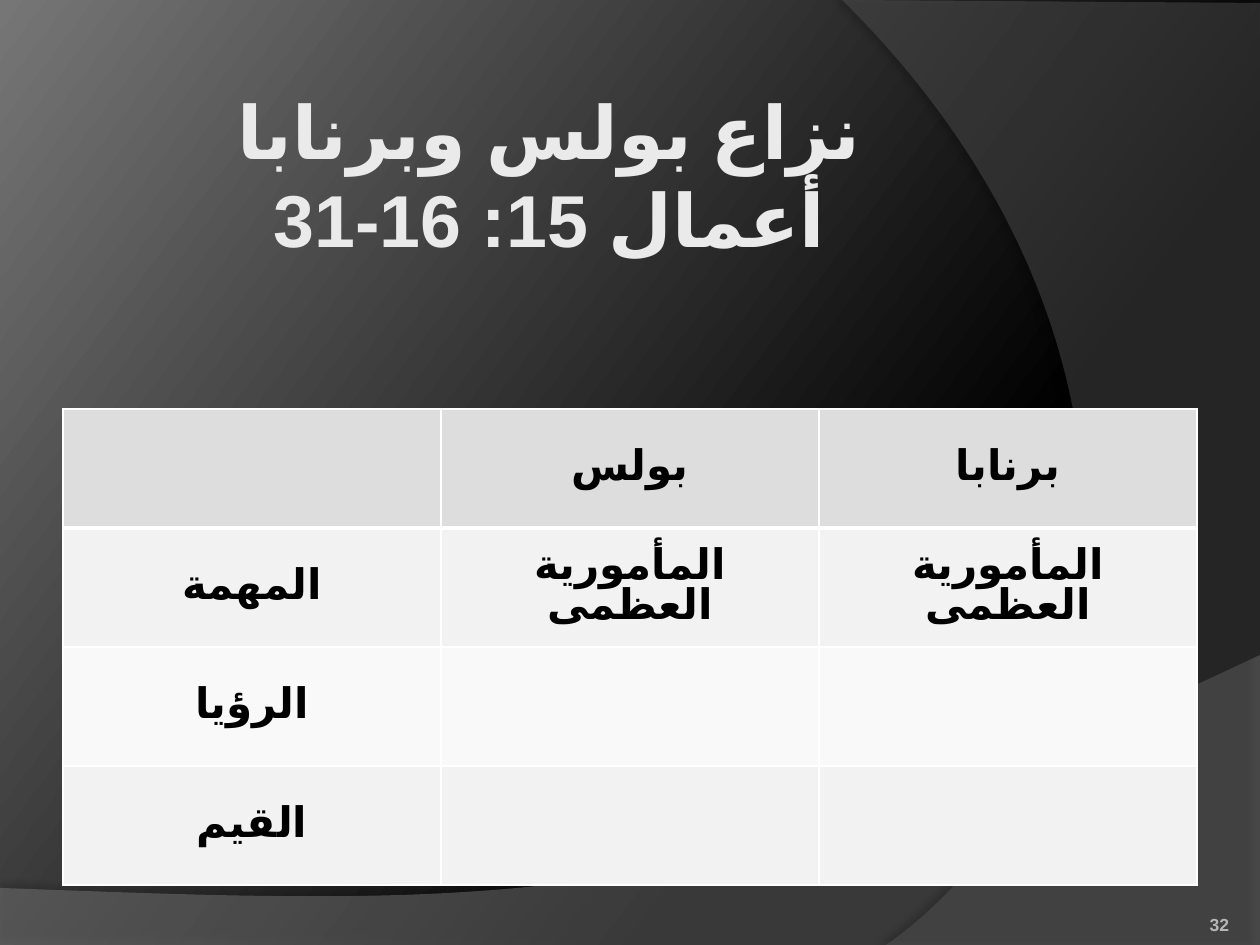
from lxml.etree import SubElement
from pptx import Presentation
from pptx.dml.color import RGBColor
from pptx.enum.lang import MSO_LANGUAGE_ID
from pptx.enum.text import MSO_ANCHOR, MSO_AUTO_SIZE, PP_ALIGN
from pptx.oxml import parse_xml
from pptx.oxml.ns import nsdecls, qn
from pptx.util import Emu, Pt

UNIT = 914400 / 126  # EMU per px
FONT = "Arial"
COLORS = {
    "black": "000000", "gray": "767676", "wave": "7F7F7F", "arc": "5E5E5E",
    "pale": "EAEAEA", "mid": "B1B1B1", "edge": "E3E3E3", "number": "B7B7B7",
    "head": "DDDDDD", "odd": "F2F2F2", "even": "F9F9F9", "white": "FFFFFF",
}
ROWS = [
    ["", "بولس", "برنابا"],
    ["المهمة", "المأمورية العظمى", "المأمورية العظمى"],
    ["الرؤيا", "", ""],
    ["القيم", "", ""],
]


def px(n):
    return Emu(round(n * UNIT))


def rgb(name):
    return RGBColor.from_string(COLORS[name])


def set_grad(root, stops, angle):
    """Give the gradient fill below root its stops and its angle."""
    grad = root.find(".//" + qn("a:gradFill"))
    for child in list(grad):
        grad.remove(child)
    items = SubElement(grad, qn("a:gsLst"))
    for pos, name in stops:
        stop = SubElement(items, qn("a:gs"), pos=str(pos * 1000))
        SubElement(stop, qn("a:srgbClr"), val=COLORS[name])
    SubElement(grad, qn("a:lin"), ang=str(angle * 60000), scaled="0")


def style(para, size, align, color=None):
    para.alignment = align
    font = para.font
    font.size, font.bold, font.name = Pt(size), True, FONT
    if color:
        font.color.rgb = rgb(color)
    SubElement(para._p.pPr.find(qn("a:defRPr")), qn("a:cs"), typeface=FONT)


def set_arabic(para):
    """Mark the text as Arabic, read from the right."""
    para._p.get_or_add_pPr().set("rtl", "1")
    for run in para.runs:
        run.font.language_id = MSO_LANGUAGE_ID.ARABIC


def set_frame(frame, anchor, side=0):
    frame.word_wrap = True
    frame.auto_size = MSO_AUTO_SIZE.NONE
    frame.vertical_anchor = anchor
    frame.margin_left = frame.margin_right = px(side)
    frame.margin_top = frame.margin_bottom = 0


def add_wave(slide, points, color, alpha, shadow):
    """Outline whose last three points form one cubic curve."""
    build = slide.shapes.build_freeform(*points[0], scale=UNIT)
    build.add_line_segments(points[1:], close=True)
    wave = build.convert_to_shape()
    lines = wave._element.findall(".//" + qn("a:lnTo"))[-3:]
    bend = parse_xml(f'<a:cubicBezTo {nsdecls("a")}/>')
    lines[0].addprevious(bend)
    for line in lines:
        bend.append(line[0])
        line.getparent().remove(line)

    wave.fill.solid()
    wave.fill.fore_color.rgb = rgb(color)
    wave.line.fill.background()
    tone = wave._element.spPr.find(".//" + qn("a:srgbClr"))
    SubElement(tone, qn("a:alpha"), val=str(alpha * 1000))
    # Soft shadow along the curved edge
    wave.shadow.inherit = False
    depth, blur, dist, angle = shadow
    effects = wave._element.spPr.find(qn("a:effectLst"))
    outer = SubElement(
        effects, qn("a:outerShdw"), blurRad=str(Pt(blur)), dist=str(Pt(dist)),
        dir=str(angle * 60000), algn="ctr", rotWithShape="0")
    tone = SubElement(outer, qn("a:srgbClr"), val=COLORS["black"])
    SubElement(tone, qn("a:alpha"), val=str(depth * 1000))


def add_title(slide, text):
    title = slide.shapes.title
    title.left, title.top = px(92), px(86)
    title.width, title.height = px(914), px(252)
    frame = title.text_frame
    frame.text = text
    set_frame(frame, MSO_ANCHOR.TOP, 6)
    para = frame.paragraphs[0]
    style(para, 42, PP_ALIGN.CENTER)
    set_arabic(para)
    para.font.fill.gradient()
    set_grad(para._p, [(0, "pale"), (9, "pale"), (53, "mid"),
                       (90, "pale"), (100, "pale")], 90)
    para._p.pPr.find(qn("a:defRPr")).insert(0, outline("ln", "edge", 0.39))
    slide.shapes._spTree.append(title._element)  # in front of the waves


def outline(tag, color, width):
    return parse_xml(
        f'<a:{tag} {nsdecls("a")} w="{Pt(width)}"><a:solidFill>'
        f'<a:srgbClr val="{COLORS[color]}"/></a:solidFill></a:{tag}>')


def fill_cell(cell, text, color, top, bottom):
    cell.fill.solid()
    cell.fill.fore_color.rgb = rgb(color)
    cell.vertical_anchor = MSO_ANCHOR.MIDDLE
    sides = [("lnL", 1), ("lnR", 1), ("lnT", top), ("lnB", bottom)]
    for i, (tag, width) in enumerate(sides):
        cell._tc.tcPr.insert(i, outline(tag, "white", width))
    if text:
        cell.text = text
        para = cell.text_frame.paragraphs[0]
        style(para, 24, PP_ALIGN.CENTER, "black")
        set_arabic(para)
        para.line_spacing = 0.85


def add_grid(slide, rows):
    count, wide = len(rows), len(rows[0])
    grid = slide.shapes.add_table(
        count, wide, px(63), px(409), px(378 * wide), px(119 * count)).table
    grid.horz_banding = False
    fills = ["head", "odd", "even", "odd"]
    for r, row in enumerate(rows):
        for c, text in enumerate(row):
            fill_cell(grid.cell(r, c), text, fills[r],
                      3 if r == 1 else 1, 3 if r == 0 else 1)


def add_number(slide, text):
    box = slide.shapes.add_textbox(px(1124), px(885), px(105), px(50))
    frame = box.text_frame
    frame.text = text
    set_frame(frame, MSO_ANCHOR.BOTTOM)
    style(frame.paragraphs[0], 10, PP_ALIGN.RIGHT, "number")


def main():
    deck = Presentation()
    deck.slide_width, deck.slide_height = px(1260), px(945)
    slide = deck.slides.add_slide(deck.slide_layouts[5])

    # Background
    slide.background.fill.gradient()
    set_grad(slide._element, [(0, "black"), (30, "black"), (100, "gray")], 217)
    low = [(0, 888), (0, 946), (1260, 946), (1260, 655),
           (704, 919), (493, 906), (0, 888)]
    add_wave(slide, low, "wave", 45, (35, 4, 3.5, 270))
    arc = [(1260, 3), (1260, 945), (886, 945),
           (1123, 780), (1193, 346), (842, 0)]
    add_wave(slide, arc, "arc", 40, (45, 4, 4, 180))

    # Content
    add_title(slide, "نزاع بولس وبرنابا\vأعمال 15: 16-31")
    add_number(slide, "32")
    add_grid(slide, ROWS)
    deck.save("out.pptx")


if __name__ == "__main__":
    main()
